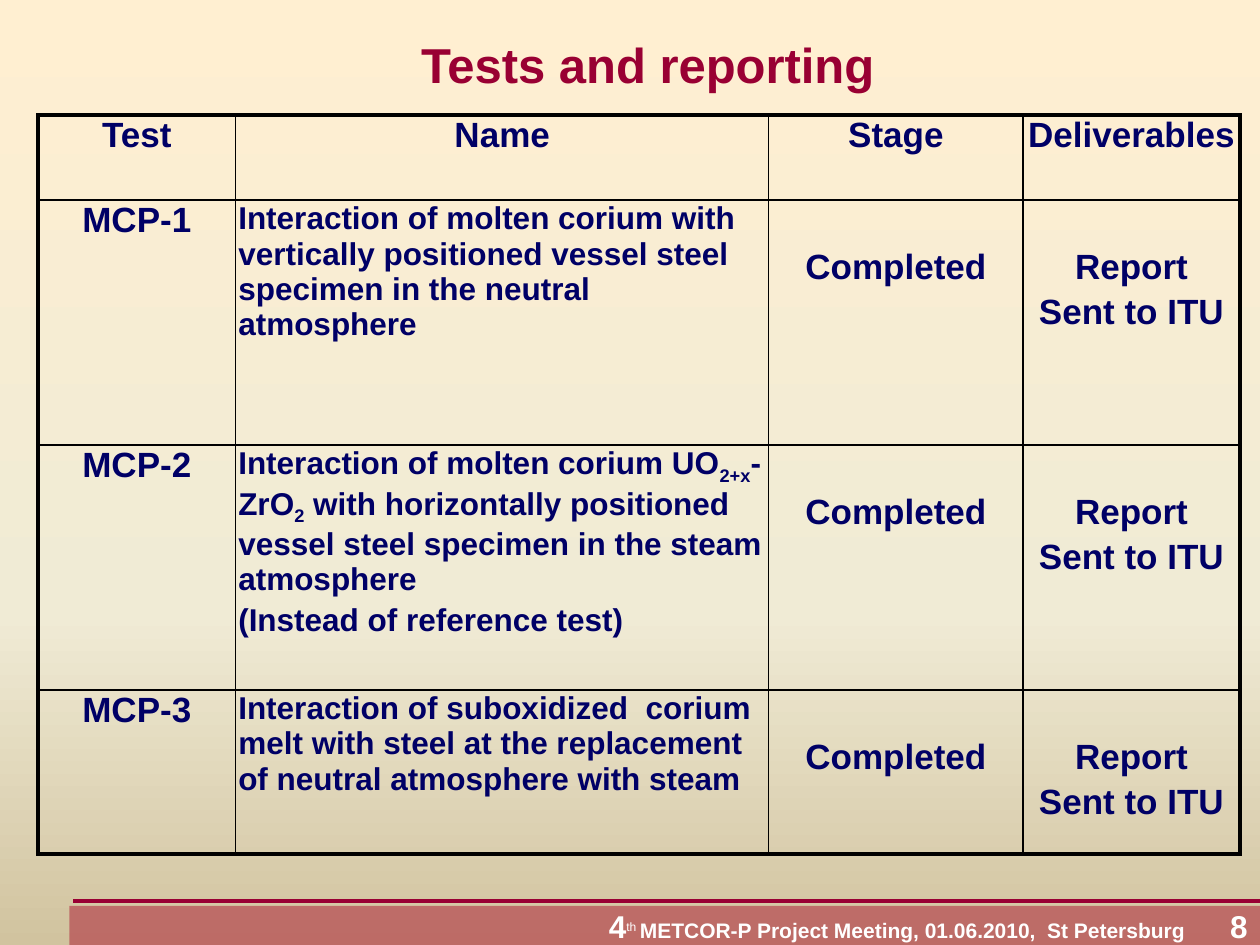
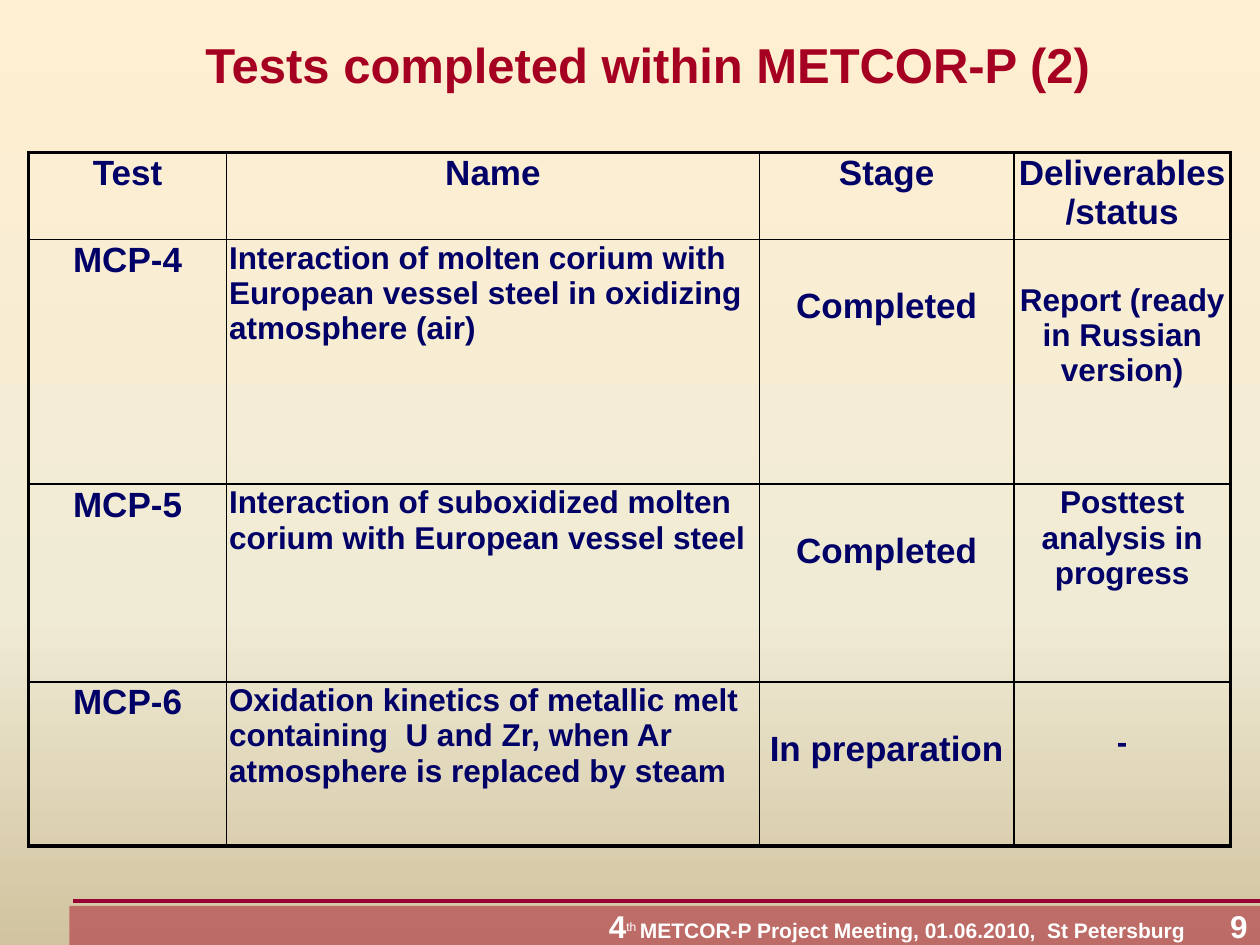
from copy import deepcopy
from dataclasses import dataclass

from lxml.etree import SubElement
from pptx import Presentation
from pptx.dml.color import RGBColor
from pptx.enum.shapes import MSO_CONNECTOR, MSO_SHAPE
from pptx.enum.text import MSO_ANCHOR, PP_ALIGN
from pptx.oxml.ns import qn
from pptx.util import Pt

# Shared look
FONT = "Arial"
CRIMSON, RED, NAVY, WHITE, BLACK = "990033", "A50021", "000066", "FFFFFF", "000000"
BACKGROUND = [(0, "FFEFD1"), (65, "F0EBD5"), (100, "D1C39F")]
PAGE_WIDTH, PAGE_HEIGHT = 720, 540
BAND_LEFT, BAND_TOP, BAND_HEIGHT = 39.6, 517.7, 22.3
COLUMN_WIDTHS = [113, 304.6, 145.4, 123.8]
LARGE, SMALL = 20, 18
PARAGRAPH_GAP = 3.4
OUTER_LINE, INNER_LINE = 2.25, 1
SUBSCRIPT, SUPERSCRIPT = -25, 30


@dataclass
class Entry:
    """One cell: paragraphs are strings or lists of (text, baseline) spans."""
    paragraphs: list
    size: int = LARGE
    align: PP_ALIGN = PP_ALIGN.CENTER
    lowered: bool = False


def color(hex_string):
    return RGBColor.from_string(hex_string)


def style(font, size, hex_string, bold=True):
    font.name = FONT
    font.size = Pt(size)
    font.bold = bold
    font.color.rgb = color(hex_string)


def set_insets(frame, left, top, right, bottom):
    frame.margin_left, frame.margin_top = Pt(left), Pt(top)
    frame.margin_right, frame.margin_bottom = Pt(right), Pt(bottom)


def add_span(para, text, baseline=0):
    span = para.add_run()
    span.text = text
    if baseline:
        span.font._element.set("baseline", str(baseline * 1000))
    return span


# Background
def paint_background(master):
    fill = master.background.fill
    fill.gradient()
    fill.gradient_angle = 270
    stops = fill._xPr.find(qn("a:gradFill")).find(qn("a:gsLst"))
    stops.append(deepcopy(stops[-1]))
    for stop, (position, hex_string) in zip(fill.gradient_stops, BACKGROUND):
        stop.position = position / 100
        stop.color.rgb = color(hex_string)


# Text and footer
def add_text(page, text, left, top, width, height, size, hex_string, align):
    box = page.shapes.add_textbox(Pt(left), Pt(top), Pt(width), Pt(height))
    frame = box.text_frame
    frame.word_wrap = True
    frame.vertical_anchor = MSO_ANCHOR.MIDDLE
    set_insets(frame, 7.2, 3.6, 7.2, 3.6)
    para = frame.paragraphs[0]
    para.alignment = align
    add_span(para, text)
    style(para.font, size, hex_string)


def add_rule(page):
    rule = page.shapes.add_connector(
        MSO_CONNECTOR.STRAIGHT, Pt(41.8), Pt(514.8), Pt(PAGE_WIDTH), Pt(514.8))
    rule.line.color.rgb = color(CRIMSON)
    rule.line.width = Pt(2.25)
    SubElement(rule._element.spPr, qn("a:effectLst"))


def add_footer(page, number):
    add_rule(page)
    band = page.shapes.add_shape(
        MSO_SHAPE.RECTANGLE, Pt(BAND_LEFT), Pt(BAND_TOP),
        Pt(PAGE_WIDTH - BAND_LEFT), Pt(BAND_HEIGHT))
    band.shadow.inherit = False
    band.line.fill.background()
    band.fill.solid()
    band.fill.fore_color.rgb = color(RED)
    tint = band._element.spPr.find(qn("a:solidFill"))[0]
    SubElement(tint, qn("a:alpha"), val="45000")

    frame = band.text_frame
    frame.word_wrap = False
    frame.vertical_anchor = MSO_ANCHOR.MIDDLE
    set_insets(frame, 7.2, 3.6, 42.5, 3.6)
    para = frame.paragraphs[0]
    para.alignment = PP_ALIGN.RIGHT
    style(add_span(para, "4").font, 18, WHITE)
    style(add_span(para, "th ", SUPERSCRIPT).font, 12, WHITE, bold=False)
    meeting = add_span(para, "METCOR-P Project Meeting, 01.06.2010,  St Petersburg")
    style(meeting.font, 12, WHITE)
    add_text(page, str(number), PAGE_WIDTH - 40, BAND_TOP, 40, BAND_HEIGHT,
             18, WHITE, PP_ALIGN.RIGHT)


# Table
def add_border(cell, side, width):
    line = SubElement(cell._tc.get_or_add_tcPr(), qn(f"a:ln{side}"), w=str(Pt(width)))
    fill = SubElement(line, qn("a:solidFill"))
    SubElement(fill, qn("a:srgbClr"), val=BLACK)


def fill_cell(cell, entry):
    drop = entry.size * 1.15 + PARAGRAPH_GAP if entry.lowered else 0
    set_insets(cell, 1.5, 0.7 + drop, 1.5, 0.7)
    frame = cell.text_frame
    for index, content in enumerate(entry.paragraphs):
        para = frame.add_paragraph() if index else frame.paragraphs[0]
        para.alignment = entry.align
        if index:
            para.space_before = Pt(PARAGRAPH_GAP)
        spans = [(content, 0)] if isinstance(content, str) else content
        for text, baseline in spans:
            # Run properties carry the font so that table styles do not override it
            style(add_span(para, text, baseline).font, entry.size, NAVY)


def add_test_table(page, left, top, row_heights, rows):
    table = page.shapes.add_table(
        len(rows), len(COLUMN_WIDTHS), Pt(left), Pt(top),
        Pt(sum(COLUMN_WIDTHS)), Pt(sum(row_heights))).table
    table.first_row = table.horz_banding = False
    for column, width in zip(table.columns, COLUMN_WIDTHS):
        column.width = Pt(width)
    last_row, last_column = len(rows) - 1, len(COLUMN_WIDTHS) - 1
    for r, (entries, height) in enumerate(zip(rows, row_heights)):
        table.rows[r].height = Pt(height)
        for c, entry in enumerate(entries):
            cell = table.cell(r, c)
            edges = {"L": c == 0, "R": c == last_column, "T": r == 0, "B": r == last_row}
            for side, is_outer in edges.items():
                add_border(cell, side, OUTER_LINE if is_outer else INNER_LINE)
            cell.fill.background()
            fill_cell(cell, entry)


def header(last_heading):
    return [Entry([text]) for text in ("Test", "Name", "Stage", last_heading)]


def test_row(test, name, stage, deliverable):
    return [Entry([test]), Entry(name, SMALL, PP_ALIGN.LEFT),
            Entry([stage], lowered=True), deliverable]


def add_page(deck, number, title, title_color):
    page = deck.slides.add_slide(deck.slide_layouts[6])
    add_footer(page, number)
    add_text(page, title, 54, 13.7, 632.2, 46, 28, title_color, PP_ALIGN.CENTER)
    return page


# Pages
def add_reporting_page(deck):
    page = add_page(deck, 8, "Tests and reporting", CRIMSON)
    report = Entry(["Report", "Sent to ITU"], lowered=True)
    oxide_name = [("Interaction of molten corium UO", 0), ("2+x", SUBSCRIPT),
                  ("-ZrO", 0), ("2", SUBSCRIPT),
                  (" with horizontally positioned vessel steel specimen "
                   "in the steam atmosphere", 0)]
    add_test_table(page, 21.7, 65.7, [48.6, 140, 140, 93.7], [
        header("Deliverables"),
        test_row("МСР-1", ["Interaction of molten corium with vertically positioned "
                           "vessel steel specimen in the neutral atmosphere"],
                 "Completed", report),
        test_row("МСР-2", [oxide_name, "(Instead of reference test)"],
                 "Completed", report),
        test_row("МСР-3", ["Interaction of suboxidized  corium melt with steel at the "
                           "replacement of neutral atmosphere with steam"],
                 "Completed", report),
    ])


def add_completed_page(deck):
    page = add_page(deck, 9, "Tests completed within METCOR-P (2)", RED)
    add_test_table(page, 16.4, 87.3, [48.6, 140, 113, 93.7], [
        header("Deliverables/status"),
        test_row("МСР-4", ["Interaction of molten corium with European vessel steel "
                           "in oxidizing atmosphere (air)"],
                 "Completed",
                 Entry(["Report (ready in Russian version)"], SMALL, lowered=True)),
        test_row("МСР-5", ["Interaction of suboxidized molten corium with European "
                           "vessel steel"],
                 "Completed", Entry(["Posttest analysis in progress"], SMALL)),
        test_row("МСР-6", ["Oxidation kinetics of metallic melt containing  U and Zr, "
                           "when Ar atmosphere is replaced by steam"],
                 "In preparation", Entry(["-"], SMALL, lowered=True)),
    ])


def main():
    deck = Presentation()
    deck.slide_width, deck.slide_height = Pt(PAGE_WIDTH), Pt(PAGE_HEIGHT)
    paint_background(deck.slide_master)
    add_reporting_page(deck)
    add_completed_page(deck)
    deck.save("out.pptx")


if __name__ == "__main__":
    main()
